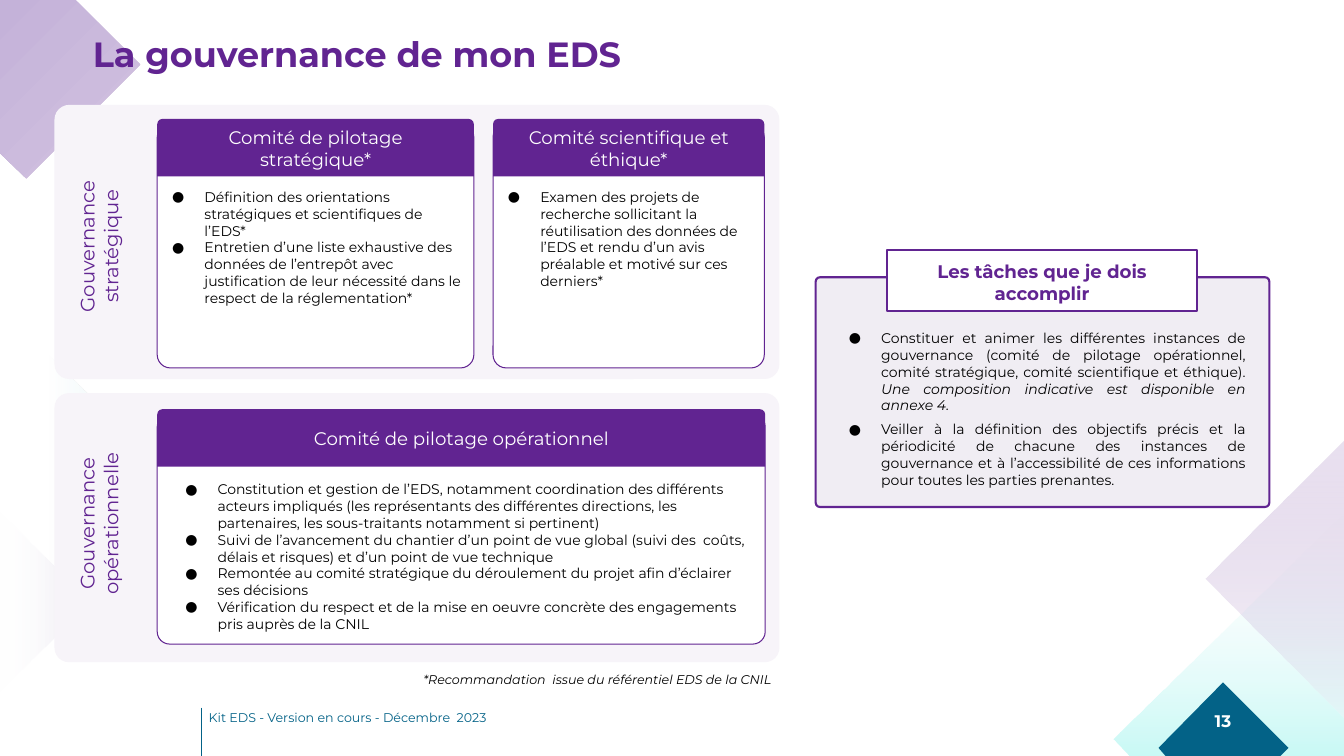
import pptx
import pptx.util
import pptx.dml.color
import pptx.enum.shapes
import pptx.enum.text
import pptx.oxml
import pptx.oxml.ns
from lxml import etree

Inches, Pt = pptx.util.Inches, pptx.util.Pt
SHAPE = pptx.enum.shapes.MSO_SHAPE
ALIGN = pptx.enum.text.PP_ALIGN
ANCHOR = pptx.enum.text.MSO_ANCHOR
qn = pptx.oxml.ns.qn

COLORS = {
    "purple": "612491", "lilac": "F7F4F9", "task": "F0EDF3",
    "blue": "036287", "white": "FFFFFF", "black": "000000",
    "ice": "E7F6F9", "mist": "E9E6F0", "mint": "5DEEE3",
    "frost": "F5F7FC", "mauve": "C4B2D9", "pale mauve": "D2C2E0",
}


def rgb(name):
    return pptx.dml.color.RGBColor.from_string(COLORS[name])


class GovernanceSlide:
    font = "Montserrat"

    def __init__(self, prs):
        self.s = prs.slides.add_slide(prs.slide_layouts[5])

    def paint(self, sp, fill, line=None, width=0.75):
        sp.shadow.inherit = False
        if fill:
            sp.fill.solid()
            sp.fill.fore_color.rgb = rgb(fill)
        if line:
            sp.line.color.rgb = rgb(line)
            sp.line.width = Pt(width)
        else:
            sp.line.fill.background()

    def polygon(self, points, fill=None, stops=(), angle=0):
        """Draw an outline; stops are (percent, colour, opacity percent), angle is clockwise."""
        pts = [(Inches(x), Inches(y)) for x, y in points]
        fb = self.s.shapes.build_freeform(*pts[0])
        fb.add_line_segments(pts[1:], close=True)
        sp = fb.convert_to_shape()
        self.paint(sp, fill)
        if stops:
            gs = "".join(
                f'<a:gs pos="{pos * 1000}"><a:srgbClr val="{COLORS[color]}">'
                f'<a:alpha val="{alpha * 1000}"/></a:srgbClr></a:gs>'
                for pos, color, alpha in stops)
            grad = pptx.oxml.parse_xml(
                f'<a:gradFill {pptx.oxml.ns.nsdecls("a")} rotWithShape="1"><a:gsLst>{gs}</a:gsLst>'
                f'<a:lin ang="{angle * 60000}" scaled="0"/></a:gradFill>')
            sp.element.spPr.find(qn("a:custGeom")).addnext(grad)

    def line(self, x1, y1, x2, y2, color):
        c = self.s.shapes.add_connector(
            pptx.enum.shapes.MSO_CONNECTOR.STRAIGHT, *map(Inches, (x1, y1, x2, y2)))
        c.line.color.rgb = rgb(color)
        c.line.width = Pt(1)
        etree.SubElement(c.element.spPr, qn("a:effectLst"))

    def shape(self, kind, box, fill, line=None, width=0.75, adj=()):
        sp = self.s.shapes.add_shape(kind, *map(Inches, box))
        self.paint(sp, fill, line, width)
        for i, value in enumerate(adj):
            sp.adjustments[i] = value
        return sp

    def bullet(self, p):
        pPr = p._p.get_or_add_pPr()
        pPr.set("marL", str(Inches(0.5)))
        pPr.set("indent", str(Inches(-0.32)))
        clr = etree.SubElement(pPr, qn("a:buClr"))
        etree.SubElement(clr, qn("a:srgbClr")).set("val", COLORS["black"])
        etree.SubElement(pPr, qn("a:buFont")).set("typeface", self.font)
        etree.SubElement(pPr, qn("a:buChar")).set("char", "●")

    def fill_text(self, sp, paragraphs, size, color="black", inset=0.1, anchor=ANCHOR.TOP,
                  bullets=False, para=None, gap=0, **font):
        """Fill a shape; a paragraph given as a tuple adds an italic second line."""
        tf = sp.text_frame
        frame = {f"margin_{side}": Inches(inset) for side in ("left", "top", "right", "bottom")}
        frame.update(word_wrap=True, vertical_anchor=anchor,
                     auto_size=pptx.enum.text.MSO_AUTO_SIZE.NONE)
        for name, value in frame.items():
            setattr(tf, name, value)
        for i, content in enumerate(paragraphs):
            p = tf.add_paragraph() if i else tf.paragraphs[0]
            if bullets:
                self.bullet(p)
            fmt = {"alignment": ALIGN.LEFT, "space_before": Pt(gap if i else 0), **(para or {})}
            for name, value in fmt.items():
                setattr(p, name, value)
            parts = (content,) if isinstance(content, str) else content
            for j, text in enumerate(parts):
                if j:
                    p.add_line_break()
                r = p.add_run()
                r.text = text
                style = {"name": self.font, "size": Pt(size), **font}
                if j:
                    style["italic"] = True
                for name, value in style.items():
                    setattr(r.font, name, value)
                r.font.color.rgb = rgb(color)

    def text(self, box, paragraphs, size, rotation=0, **style):
        sp = self.s.shapes.add_textbox(*map(Inches, box))
        sp.rotation = rotation
        self.fill_text(sp, paragraphs, size, **style)

    def title(self, box, text):
        sp = self.s.shapes.title
        sp.left, sp.top, sp.width, sp.height = map(Inches, box)
        sp.element.getparent().append(sp.element)
        self.fill_text(sp, [text], 25, "purple", inset=0, bold=True, para={"line_spacing": 0.9})

    def committee(self, left, top, width, height, name, text_box, duties):
        self.shape(SHAPE.ROUNDED_RECTANGLE, (left, top + 0.05, width, height),
                   "white", "purple", adj=[0.054])
        head = self.shape(SHAPE.ROUND_2_SAME_RECTANGLE, (left, top, width, 0.57),
                          "purple", adj=[0.091, 0])
        self.fill_text(head, [name], 13, "white", inset=0.13, anchor=ANCHOR.MIDDLE,
                       para={"alignment": ALIGN.CENTER})
        self.text(text_box, duties, 10, bullets=True)

    def level(self, top, height, label_box, label):
        self.shape(SHAPE.ROUNDED_RECTANGLE, (0.54, top, 7.19, height), "lilac", adj=[0.054])
        self.text(label_box, [label], 14, rotation=270, color="purple",
                  para={"alignment": ALIGN.CENTER})


def main():
    prs = pptx.Presentation()
    prs.slide_width, prs.slide_height = Inches(13.33), Inches(7.5)
    g = GovernanceSlide(prs)

    g.polygon([(0, 0), (0.75, 0), (1.39, 0.64), (0.26, 1.77), (0, 1.52)],
              stops=[(0, "mauve", 100), (100, "pale mauve", 100)], angle=45)
    g.polygon([(11.21, 7.5), (13.33, 7.5), (13.33, 5.08), (11.04, 7.32)],
              stops=[(0, "frost", 0), (100, "mint", 34)], angle=90)
    g.polygon([(11.56, 7.5), (12.7, 7.5), (12.78, 7.42), (12.13, 6.77), (11.49, 7.42)], "blue")
    g.polygon([(13.33, 4.37), (13.33, 7.12), (11.96, 5.74)],
              stops=[(0, "purple", 14), (100, "lilac", 34)], angle=90)
    g.polygon([(0, 3.04), (1.55, 4.59), (0, 6.13)],
              stops=[(0, "ice", 100), (69, "ice", 0), (100, "ice", 0)], angle=180)
    g.polygon([(0, 5.07), (0.9, 5.97), (0, 6.86)],
              stops=[(0, "mist", 100), (100, "white", 0)], angle=180)
    g.line(2, 7.02, 2, 7.5, "blue")
    g.text((2.07, 7.02, 4.33, 0.2), ["Kit EDS - Version en cours - Décembre  2023"], 9,
           color="blue", inset=0, anchor=ANCHOR.MIDDLE)
    g.text((11.85, 6.95, 0.56, 0.4), ["13"], 12, color="white", inset=0.05, bold=True,
           anchor=ANCHOR.MIDDLE, para={"alignment": ALIGN.CENTER})
    g.title((0.92, 0.37, 11.5, 0.57), "La gouvernance de mon EDS")

    g.level(1.04, 2.72, (0.18, 2.09, 1.64, 0.71), "Gouvernance stratégique")
    g.committee(1.56, 1.18, 3.14, 2.42, "Comité de pilotage stratégique*", (1.43, 1.77, 3.27, 1.72), [
        "Définition des orientations stratégiques et scientifiques de l’EDS*",
        "Entretien d’une liste exhaustive des données de l’entrepôt avec justification de leur "
        "nécessité dans le respect de la réglementation*"])
    g.committee(4.89, 1.18, 2.69, 2.42, "Comité scientifique et éthique*", (4.76, 1.77, 2.78, 1.72), [
        "Examen des projets de recherche sollicitant la réutilisation des données de l’EDS et "
        "rendu d’un avis préalable et motivé sur ces derniers*"])

    g.level(3.9, 2.67, (0.11, 4.84, 1.78, 0.71), "Gouvernance opérationnelle")
    g.committee(1.56, 4.06, 6.03, 2.28, "Comité de pilotage opérationnel", (1.56, 4.67, 6.03, 1.16), [
        "Constitution et gestion de l’EDS, notamment coordination des différents acteurs impliqués "
        "(les représentants des différentes directions, les partenaires, les sous-traitants "
        "notamment si pertinent)",
        "Suivi de l’avancement du chantier d’un point de vue global (suivi des  coûts, délais et "
        "risques) et d’un point de vue technique",
        "Remontée au comité stratégique du déroulement du projet afin d’éclairer ses décisions",
        "Vérification du respect et de la mise en oeuvre concrète des engagements pris auprès "
        "de la CNIL"])
    g.text((4.1, 6.57, 3.79, 0.4), ["*Recommandation  issue du référentiel EDS de la CNIL"], 9,
           italic=True)

    g.shape(SHAPE.ROUNDED_RECTANGLE, (8.09, 2.75, 4.5, 2.28), "task", "purple", 1.5, [0.019])
    heading = g.shape(SHAPE.RECTANGLE, (8.8, 2.48, 3.07, 0.61), "white", "purple", 1.5)
    g.fill_text(heading, ["Les tâches que je dois accomplir"], 13, "purple", bold=True,
                para={"alignment": ALIGN.CENTER})
    g.text((8.14, 3.17, 4.31, 1.64), [
        ("Constituer et animer les différentes instances de gouvernance (comité de pilotage "
         "opérationnel, comité stratégique, comité scientifique et éthique).",
         "Une composition indicative est disponible en annexe 4."),
        "Veiller à la définition des objectifs précis et la périodicité de chacune des instances "
        "de gouvernance et à l’accessibilité de ces informations pour toutes les parties prenantes.",
    ], 10, bullets=True, gap=5, para={"alignment": ALIGN.JUSTIFY})

    prs.save("out.pptx")


if __name__ == "__main__":
    main()
